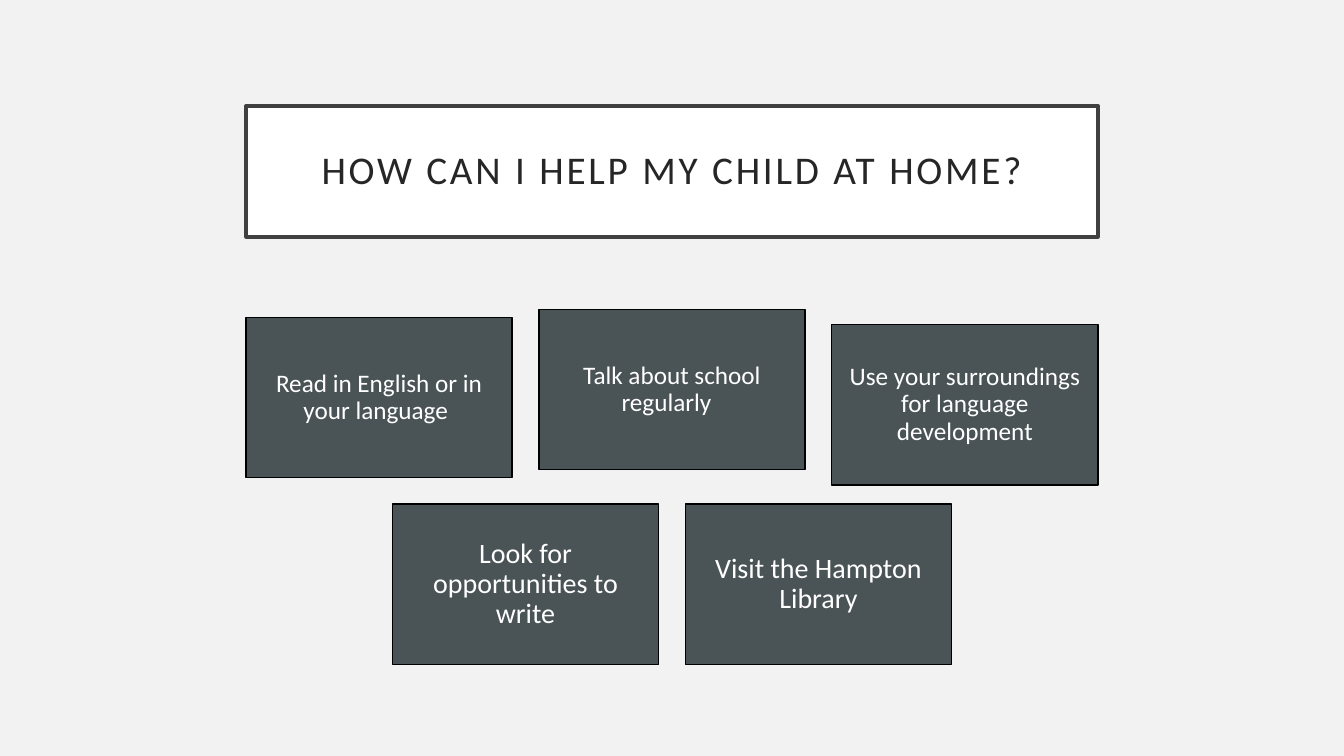
import pptx
import pptx.util
import pptx.dml.color
import pptx.enum.shapes
import pptx.enum.text

Inches = pptx.util.Inches
tones = {"back": "F2F2F2", "white": "FFFFFF", "edge": "404040",
         "title": "262626", "card": "4A5356", "black": "000000"}


def tint(name):
    return pptx.dml.color.RGBColor.from_string(tones[name])


def style(shape, text, size, color, fill, line, width, inset, track=0):
    shape.fill.solid()
    shape.fill.fore_color.rgb = tint(fill)
    shape.line.color.rgb = tint(line)
    shape.line.width = pptx.util.Pt(width)
    frame = shape.text_frame
    frame.word_wrap = True
    frame.auto_size = pptx.enum.text.MSO_AUTO_SIZE.NONE
    frame.vertical_anchor = pptx.enum.text.MSO_ANCHOR.MIDDLE
    frame.margin_left = frame.margin_right = Inches(inset)
    frame.margin_top = frame.margin_bottom = Inches(inset)
    para = frame.paragraphs[0]
    para.alignment = pptx.enum.text.PP_ALIGN.CENTER
    para.line_spacing = 0.9
    run = para.add_run()
    run.text = text
    run.font.name = "Calibri"
    run.font.size = pptx.util.Pt(size)
    run.font.color.rgb = tint(color)
    if track:
        run.font._element.set("spc", str(track * 100))


deck = pptx.Presentation()
deck.slide_width = Inches(13.33)
deck.slide_height = Inches(7.5)
slide = deck.slides.add_slide(deck.slide_layouts[5])
slide.background.fill.solid()
slide.background.fill.fore_color.rgb = tint("back")

left, wide = 2.44, 8.45
card_w, card_h = 2.64, 1.59
step = (wide - card_w) / 2

title = slide.shapes.title
title.left, title.top = Inches(left), Inches(1.05)
title.width, title.height = Inches(wide), Inches(1.3)
style(title, "HOW CAN I HELP MY CHILD AT HOME?", size=28, color="title",
      fill="white", line="edge", width=2.5, inset=0.2, track=2)

cards = [
    (0, 3.15, 18, 0.07, "Read in English or in your language\t"),
    (1, 3.07, 18, 0.07, "Talk about school regularly\t"),
    (2, 3.22, 18, 0.07, "Use your surroundings for language development"),
    (0.5, 5, 20, 0.08, "Look for opportunities to write"),
    (1.5, 5, 20, 0.08, "Visit the Hampton Library"),
]
for col, top, size, inset, text in cards:
    card = slide.shapes.add_shape(
        pptx.enum.shapes.MSO_SHAPE.RECTANGLE, Inches(left + col * step),
        Inches(top), Inches(card_w), Inches(card_h))
    card.shadow.inherit = False
    style(card, text, size=size, color="white", fill="card",
          line="black", width=1, inset=inset)

deck.save("out.pptx")
